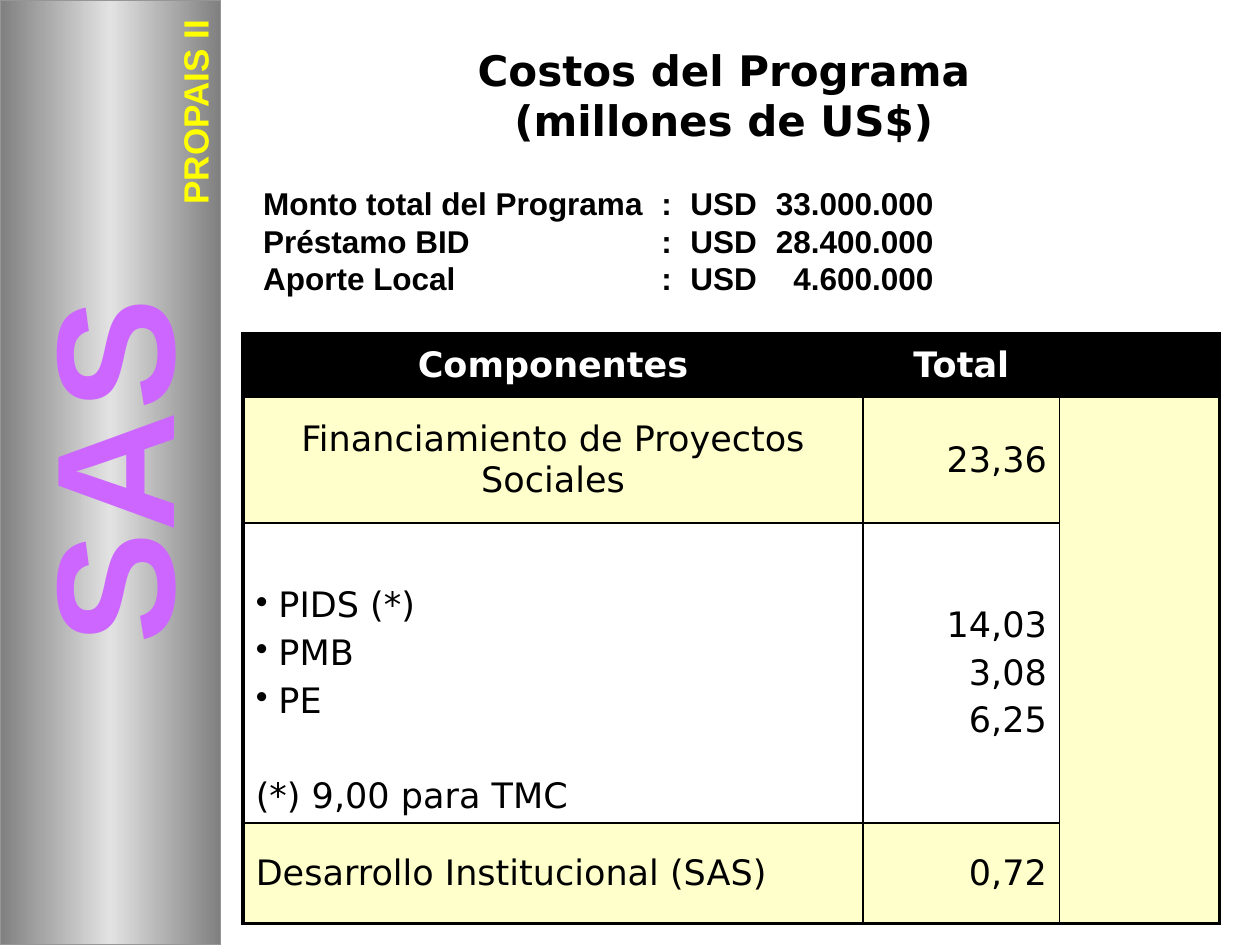
from copy import deepcopy
from typing import NamedTuple

from lxml import etree
from pptx import Presentation
from pptx import util as u
from pptx.dml.color import RGBColor
from pptx.enum import shapes, text
from pptx.oxml.ns import qn

WIDE, HIGH = u.Inches(10), u.Inches(7.5)
COLS, ROWS = 100, 75  # slide grid
SANS, ARIAL = "DejaVu Sans", "Arial"
BLACK, WHITE, CREAM = "000000", "FFFFFF", "FFFFCC"
LEFT, MID, RIGHT = text.PP_ALIGN.LEFT, text.PP_ALIGN.CENTER, text.PP_ALIGN.RIGHT


class Box(NamedTuple):
    x: float
    y: float
    w: float
    h: float


class Font(NamedTuple):
    name: str
    size: float
    hue: str
    bold: bool = True


class Label(NamedTuple):
    box: Box
    words: str
    font: Font
    turn: int = 0
    wrap: bool = True
    tabs: tuple = ()


class Cell(NamedTuple):
    words: str = ""
    align: text.PP_ALIGN = LEFT


class Row(NamedTuple):
    high: float
    fill: str
    font: Font
    cells: tuple


BODY = Font(SANS, 20, BLACK, False)
HEAD = Font(SANS, 20, WHITE)
LABELS = (
    Label(Box(-6.2, 28.9, 29.4, 17), "SAS", Font(ARIAL, 96, "CC66FF"), 270, False),
    Label(Box(6.8, 6.4, 17.3, 4.3), "PROPAIS II", Font(ARIAL, 20, "FFFF00"), 270),
    Label(Box(19.9, 14.1, 60.2, 10),
          "Monto total del Programa\t:\tUSD\t33.000.000\n"
          "Préstamo BID\t:\tUSD\t28.400.000\n"
          "Aporte Local\t:\tUSD\t4.600.000",
          Font(ARIAL, 18, BLACK), tabs=((31.6, "l"), (33.9, "l"), (53.2, "r"))),
)
WIDTHS = (49.2, 15.6, 2.3, 10.3)
TABLE = (
    Row(5, BLACK, HEAD, (Cell("Componentes", MID), Cell("Total", MID))),
    Row(10, CREAM, BODY, (Cell("Financiamiento de Proyectos Sociales", MID),
                          Cell("23,36", RIGHT))),
    Row(23.8, WHITE, BODY, (Cell("PIDS (*)\nPMB\nPE\n(*) 9,00 para TMC"),
                            Cell("14,03\n3,08\n6,25", RIGHT))),
    Row(8, CREAM, BODY, (Cell("Desarrollo Institucional (SAS)"), Cell("0,72", RIGHT))),
)


def color(code: str) -> RGBColor:
    return RGBColor.from_string(code)


def across(n: float) -> int:
    return round(WIDE * n / COLS)


def down(n: float) -> int:
    return round(HIGH * n / ROWS)


def place(box: Box) -> tuple:
    return across(box.x), down(box.y), across(box.w), down(box.h)


def style(frame, font: Font, align=LEFT, gap: float = 0) -> None:
    for para in frame.paragraphs:
        para.alignment = align
        para.space_before = u.Pt(gap)
        for run in para.runs:
            face = run.font
            face.name, face.size, face.bold = font.name, u.Pt(font.size), font.bold
            face.color.rgb = color(font.hue)


def add_tabs(para, stops: tuple) -> None:
    tabs = etree.SubElement(para._p.get_or_add_pPr(), qn("a:tabLst"))
    for pos, kind in stops:
        etree.SubElement(tabs, qn("a:tab"), pos=str(across(pos)), algn=kind)


def add_bullet(para) -> None:
    props = para._p.get_or_add_pPr()
    props.set("marL", str(across(1.8)))
    props.set("indent", str(-across(1.8)))
    etree.SubElement(props, qn("a:buChar"), char="•")


def add_label(slide, item: Label) -> None:
    shape = slide.shapes.add_textbox(*place(item.box))
    shape.rotation = item.turn
    frame = shape.text_frame
    frame.word_wrap = item.wrap
    frame.text = item.words
    style(frame, item.font)
    if item.tabs:
        for para in frame.paragraphs:
            add_tabs(para, item.tabs)


def add_band(slide) -> None:
    band = slide.shapes.add_shape(shapes.MSO_SHAPE.RECTANGLE, *place(Box(0, 0, 17.5, ROWS)))
    band.shadow.inherit = False
    band.line.color.rgb = color("969696")
    band.line.width = u.Pt(0.75)
    band.fill.gradient()
    band.fill.gradient_angle = 0
    stops = band._element.spPr.find(".//" + qn("a:gsLst"))
    stops.append(deepcopy(stops[0]))
    shades = zip(band.fill.gradient_stops, (0, 0.5, 1), ("808080", "E2E2E2", "808080"))
    for stop, pos, shade in shades:
        stop.position = pos
        stop.color.rgb = color(shade)


def add_edges(cell, r: int, c: int) -> None:
    """Heavy lines round the table, thin ones inside it."""
    tall = cell.span_height if cell.is_merge_origin else 1
    wide = cell.span_width if cell.is_merge_origin else 1
    outer = {"L": c == 0, "R": c + wide == len(WIDTHS),
             "T": r == 0, "B": r + tall == len(TABLE)}
    props = cell._tc.get_or_add_tcPr()
    sides = [s for s in outer if outer[s] or not cell.is_spanned]
    for i, side in enumerate(sides):
        line = etree.Element(qn("a:ln" + side), w=str(u.Pt(2.25 if outer[side] else 1)))
        fill = etree.SubElement(line, qn("a:solidFill"))
        etree.SubElement(fill, qn("a:srgbClr"), val=BLACK)
        props.insert(i, line)


def add_costs(slide) -> None:
    box = Box(19.3, 26.5, sum(WIDTHS), sum(row.high for row in TABLE))
    table = slide.shapes.add_table(len(TABLE), len(WIDTHS), *place(box)).table
    table.first_row = table.horz_banding = False
    for col, wide in zip(table.columns, WIDTHS):
        col.width = across(wide)
    table.cell(1, 2).merge(table.cell(3, 3))
    for r, row in enumerate(TABLE):
        table.rows[r].height = down(row.high)
        for c in range(len(WIDTHS)):
            cell = table.cell(r, c)
            cell.fill.solid()
            cell.fill.fore_color.rgb = color(row.fill)
            cell.vertical_anchor = text.MSO_ANCHOR.MIDDLE
            add_edges(cell, r, c)
            if c < len(row.cells):
                cell.text_frame.text = row.cells[c].words
                style(cell.text_frame, row.font, row.cells[c].align, 4)
    # Bulleted list with a footnote set apart
    parts = table.cell(2, 0)
    parts.vertical_anchor = text.MSO_ANCHOR.BOTTOM
    *points, note = parts.text_frame.paragraphs
    note.space_before = u.Pt(31)
    for para in points:
        add_bullet(para)


def add_title(slide) -> None:
    title = slide.shapes.title
    title.left, title.top, title.width, title.height = place(Box(21.6, 3, 71.7, 9))
    frame = title.text_frame
    frame.text = "Costos del Programa\v(millones de US$)"
    frame.auto_size = text.MSO_AUTO_SIZE.NONE
    frame.vertical_anchor = text.MSO_ANCHOR.MIDDLE
    style(frame, Font(SANS, 24, BLACK), MID)


def main() -> None:
    deck = Presentation()
    deck.slide_width, deck.slide_height = WIDE, HIGH
    slide = deck.slides.add_slide(deck.slide_layouts[5])
    add_title(slide)
    add_band(slide)
    for item in LABELS:
        add_label(slide, item)
    add_costs(slide)
    deck.save("out.pptx")


if __name__ == "__main__":
    main()
